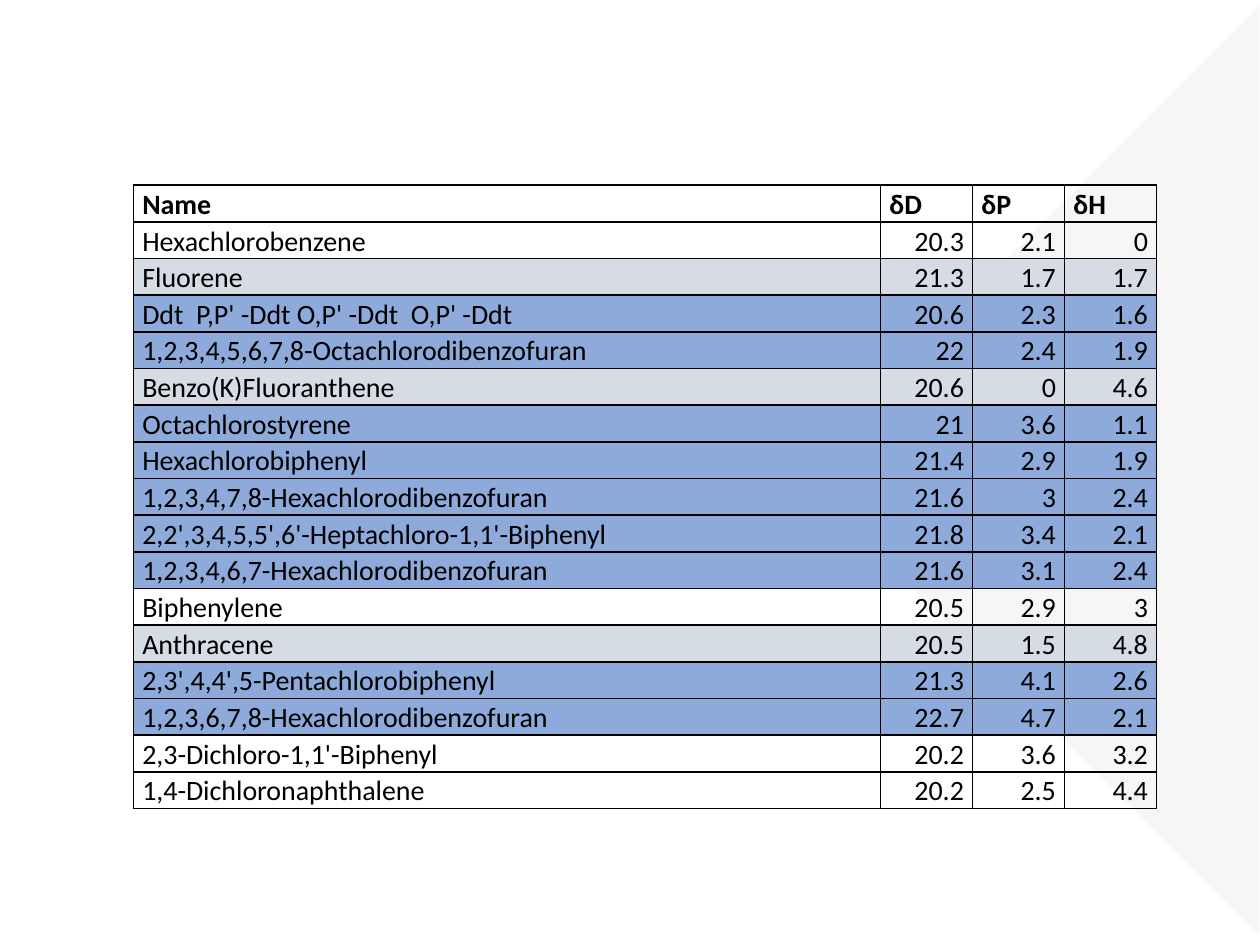
from dataclasses import dataclass

from lxml.etree import SubElement
from pptx import Presentation
from pptx.dml.color import RGBColor
from pptx.enum.shapes import MSO_SHAPE
from pptx.enum.text import MSO_ANCHOR, PP_ALIGN
from pptx.oxml.ns import qn
from pptx.util import Inches, Pt

HEADER = ("Name", "δD", "δP", "δH")
COMPOUNDS = [
    ("Hexachlorobenzene", 20.3, 2.1, 0, None),
    ("Fluorene", 21.3, 1.7, 1.7, "grey"),
    ("Ddt  P,P' -Ddt O,P' -Ddt  O,P' -Ddt", 20.6, 2.3, 1.6, "blue"),
    ("1,2,3,4,5,6,7,8-Octachlorodibenzofuran", 22, 2.4, 1.9, "blue"),
    ("Benzo(K)Fluoranthene", 20.6, 0, 4.6, "grey"),
    ("Octachlorostyrene", 21, 3.6, 1.1, "blue"),
    ("Hexachlorobiphenyl", 21.4, 2.9, 1.9, "blue"),
    ("1,2,3,4,7,8-Hexachlorodibenzofuran", 21.6, 3, 2.4, "blue"),
    ("2,2',3,4,5,5',6'-Heptachloro-1,1'-Biphenyl", 21.8, 3.4, 2.1, "blue"),
    ("1,2,3,4,6,7-Hexachlorodibenzofuran", 21.6, 3.1, 2.4, "blue"),
    ("Biphenylene", 20.5, 2.9, 3, None),
    ("Anthracene", 20.5, 1.5, 4.8, "grey"),
    ("2,3',4,4',5-Pentachlorobiphenyl", 21.3, 4.1, 2.6, "blue"),
    ("1,2,3,6,7,8-Hexachlorodibenzofuran", 22.7, 4.7, 2.1, "blue"),
    ("2,3-Dichloro-1,1'-Biphenyl", 20.2, 3.6, 3.2, None),
    ("1,4-Dichloronaphthalene", 20.2, 2.5, 4.4, None),
]
COL_WIDTHS = (5.93, 0.73, 0.73, 0.73)
ROW_HEIGHT = 0.29


@dataclass(frozen=True)
class Theme:
    font: str = "Calibri"
    size: int = 16
    line_spacing: float = 1.07
    border_pt: int = 1
    ink: str = "000000"
    grey: str = "D5DCE4"
    blue: str = "8EAADB"
    backdrop: str = "F3F3F3"
    backdrop_alpha: int = 70


THEME = Theme()


def add_backdrop(s):
    sp = s.shapes.add_shape(MSO_SHAPE.RIGHT_TRIANGLE, Inches(7.39), Inches(1.13),
                            Inches(5.21), Inches(5.21))
    sp.rotation = 45
    sp.shadow.inherit = False
    sp.line.fill.background()
    sp.fill.solid()
    sp.fill.fore_color.rgb = RGBColor.from_string(THEME.backdrop)
    color = sp.fill._xPr.find(qn("a:solidFill"))[0]
    SubElement(color, qn("a:alpha"), val=str(THEME.backdrop_alpha * 1000))


def add_borders(cell):
    tcPr = cell._tc.get_or_add_tcPr()
    for side in ("lnL", "lnR", "lnT", "lnB"):
        ln = SubElement(tcPr, qn(f"a:{side}"), w=str(Pt(THEME.border_pt)))
        fill = SubElement(ln, qn("a:solidFill"))
        SubElement(fill, qn("a:srgbClr"), val=THEME.ink)


def format_cell(cell, value, shade, bold, align):
    cell.margin_left = cell.margin_right = Inches(0.07)
    cell.margin_top = cell.margin_bottom = 0
    cell.vertical_anchor = MSO_ANCHOR.BOTTOM
    add_borders(cell)
    if shade:
        cell.fill.solid()
        cell.fill.fore_color.rgb = RGBColor.from_string(getattr(THEME, shade))
    else:
        cell.fill.background()
    p = cell.text_frame.paragraphs[0]
    p.text = str(value)
    p.alignment = align
    p.line_spacing = THEME.line_spacing
    font = p.runs[0].font
    font.name = THEME.font
    font.size = Pt(THEME.size)
    font.bold = bold
    font.color.rgb = RGBColor.from_string(THEME.ink)


def add_solubility_table(s):
    rows = [(*HEADER, None), *COMPOUNDS]
    table = s.shapes.add_table(len(rows), len(HEADER), Inches(1.06), Inches(1.47),
                               Inches(sum(COL_WIDTHS)),
                               Inches(ROW_HEIGHT * len(rows))).table
    table.first_row = table.horz_banding = False
    for col, width in zip(table.columns, COL_WIDTHS):
        col.width = Inches(width)
    for i, (*values, shade) in enumerate(rows):
        table.rows[i].height = Inches(ROW_HEIGHT)
        for j, value in enumerate(values):
            align = PP_ALIGN.RIGHT if i and j else PP_ALIGN.LEFT
            format_cell(table.cell(i, j), value, shade, i == 0, align)


def main():
    prs = Presentation()
    prs.slide_width, prs.slide_height = Inches(10), Inches(7.5)
    s = prs.slides.add_slide(prs.slide_layouts[6])
    add_backdrop(s)
    add_solubility_table(s)
    prs.save("out.pptx")


if __name__ == "__main__":
    main()
